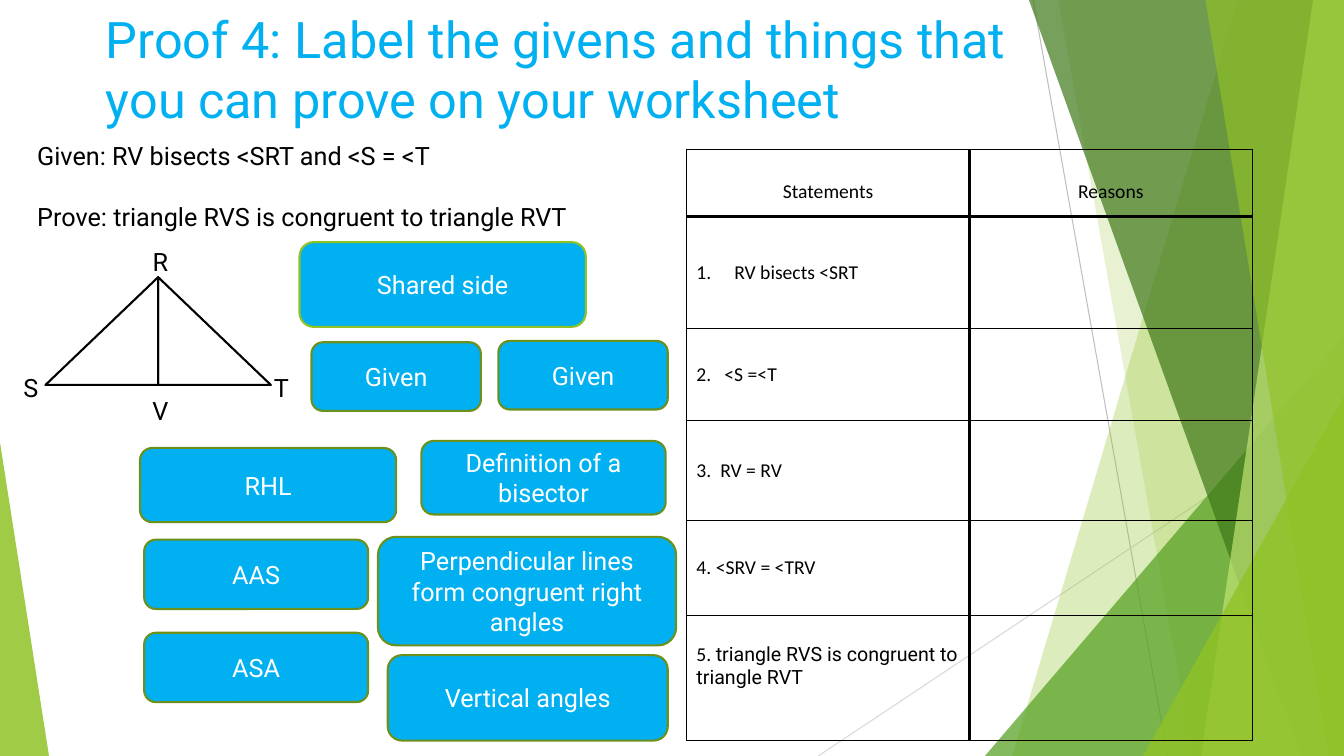
"""Build a geometry proof worksheet slide with answer cards and a two-column proof table."""
from lxml import etree
from pptx import Presentation
from pptx.dml.color import RGBColor
from pptx.enum import shapes, text
from pptx.oxml import ns
from pptx.util import Pt

WHITE = RGBColor(0xFF, 0xFF, 0xFF)
BLACK = RGBColor(0, 0, 0)
BLUE = RGBColor(0x00, 0xB0, 0xF0)
LIME = RGBColor(0x90, 0xC2, 0x26)
OLIVE = RGBColor(0x6B, 0x90, 0x1C)
GREEN = RGBColor(0x54, 0xA0, 0x21)
FOREST = RGBColor(0x3F, 0x78, 0x19)
PALE_LIME = RGBColor(0xC0, 0xE4, 0x74)
GREY = RGBColor(0xBF, 0xBF, 0xBF)
PALE_GREY = RGBColor(0xD9, 0xD9, 0xD9)

PRESET = shapes.MSO_SHAPE
ALIGN = text.PP_ALIGN
ANCHOR = text.MSO_ANCHOR

CARDS = [
    ("Shared side", (214, 173, 204.5, 60.5), LIME),
    ("Given", (356, 243.5, 121, 49), OLIVE),
    ("Definition of a bisector", (301, 315, 174.5, 52.5), OLIVE),
    ("RHL", (100, 320, 183, 53), OLIVE),
    ("AAS", (103, 385.5, 160, 49.5), OLIVE),
    ("Perpendicular lines form congruent right angles", (270, 383.5, 213, 77.5), OLIVE),
    ("ASA", (103, 452, 160, 49.5), OLIVE),
    ("Vertical angles", (277, 468, 200, 61), OLIVE),
    ("Given", (222.5, 244.5, 121, 49), OLIVE),
]

STATEMENTS = [
    ("RV bisects <SRT", 27),
    ("2.\t<S =<T", 20),
    ("3.\tRV = RV", 17),
    ("4. <SRV = <TRV", 0),
    ("5. ", 0),
]
ROW_HEIGHTS = [48, 80, 66, 71, 68, 89.5]


def style(target, values):
    """Set every attribute named in a dict."""
    for name, value in values.items():
        setattr(target, name, value)


def lengths(box):
    """Turn a box of points into lengths."""
    return [Pt(value) for value in box]


def write(para, words, size, colour, face="Roboto"):
    """Add one formatted span to a paragraph."""
    span = para.add_run()
    span.text = words
    style(span.font, {"size": Pt(size), "name": face})
    span.font.color.rgb = colour


def paint(shape, fill=None, alpha=100, line=None):
    """Give a shape its fill, transparency and outline."""
    shape.shadow.inherit = False
    if fill is None:
        shape.fill.background()
    else:
        shape.fill.solid()
        shape.fill.fore_color.rgb = fill
        if alpha < 100:
            colour = shape.fill._xPr.find(".//" + ns.qn("a:srgbClr"))
            etree.SubElement(colour, ns.qn("a:alpha"), val=str(alpha * 1000))
    if line is None:
        shape.line.fill.background()
    else:
        shape.line.color.rgb = line
        shape.line.width = Pt(1.5)


def draw_ray(page, ends, colour):
    """Draw one thin background line."""
    ray = page.shapes.add_connector(shapes.MSO_CONNECTOR.STRAIGHT, *lengths(ends))
    ray.line.color.rgb = colour
    ray.line.width = Pt(0.75)
    etree.SubElement(ray._element.spPr, ns.qn("a:effectLst"))


def draw_facet(page, box, upper, lower, colour, alpha):
    """Fill the box to the right of a slanted edge."""
    left, top, width, height = box
    right, bottom = left + width, top + height
    outline = page.shapes.build_freeform(Pt(left + upper), Pt(top))
    corners = [(right, top), (right, bottom), (left + lower, bottom)]
    outline.add_line_segments([(Pt(x), Pt(y)) for x, y in corners], close=True)
    paint(outline.convert_to_shape(), colour, alpha)


def draw_peak(page, box, apex, colour, alpha):
    """Draw a triangle with its apex at the given fraction of the width."""
    peak = page.shapes.add_shape(PRESET.ISOSCELES_TRIANGLE, *lengths(box))
    peak.adjustments[0] = apex
    paint(peak, colour, alpha)


def draw_backdrop(page, box):
    """Draw the layered green facets."""
    draw_ray(page, (738, 0, 834, 540), GREY)
    draw_ray(page, (960, 290, 584.5, 540), PALE_GREY)
    draw_facet(page, box, 184, 23, LIME, 30)
    draw_facet(page, box, 56, 152, LIME, 20)
    draw_peak(page, (703.5, 240, 256.5, 300), 1, GREEN, 72)
    draw_facet(page, box, 35, 229.5, FOREST, 70)
    draw_facet(page, box, 238, 158, PALE_LIME, 70)
    draw_facet(page, box, 161, 249, LIME, 65)
    draw_peak(page, (816.5, 283, 143.5, 257), 1, LIME, 80)
    draw_peak(page, (0, 316, 35, 224), 0, LIME, 85)


def draw_text(page, box, lines, size, colour, gap=0, align=ALIGN.LEFT):
    """Place a wrapped text box with one paragraph per line."""
    frame = page.shapes.add_textbox(*lengths(box)).text_frame
    style(frame, {"word_wrap": True, "vertical_anchor": ANCHOR.TOP})
    for index, words in enumerate(lines):
        para = frame.add_paragraph() if index else frame.paragraphs[0]
        style(para, {"alignment": align, "space_before": Pt(gap if index else 0)})
        write(para, words, size, colour)


def draw_card(page, box, words, outline):
    """Draw one rounded answer card."""
    card = page.shapes.add_shape(PRESET.ROUNDED_RECTANGLE, *lengths(box))
    paint(card, BLUE, line=outline)
    style(card.text_frame, {"word_wrap": True, "vertical_anchor": ANCHOR.MIDDLE})
    para = card.text_frame.paragraphs[0]
    para.alignment = ALIGN.CENTER
    write(para, words, 18, WHITE)


def draw_triangle(page, box):
    """Draw triangle RST with its bisector RV and vertex letters."""
    left, top, width, height = box
    half = width / 2
    for start, mirrored in ((left + half, False), (left, True)):
        side = page.shapes.add_shape(
            PRESET.RIGHT_TRIANGLE, *lengths((start, top, half, height)))
        paint(side, line=BLACK)
        if mirrored:
            side._element.spPr.xfrm.set("flipH", "1")
    vertices = {
        "R": (half - 17, -29), "S": (-29, height - 16),
        "T": (width - 11, height - 16), "V": (half - 17, height),
    }
    for letter, (x, y) in vertices.items():
        spot = (left + x, top + y + 3.5, 37, 29)
        draw_text(page, spot, [letter], 18, BLACK, align=ALIGN.CENTER)


def draw_borders(cell, widths):
    """Add black borders to a cell, in the order left, right, top, bottom."""
    props = cell._tc.get_or_add_tcPr()
    for index, (side, width) in enumerate(zip("LRTB", widths)):
        edge = etree.Element(ns.qn("a:ln" + side), w=str(Pt(width)))
        fill = etree.SubElement(edge, ns.qn("a:solidFill"))
        etree.SubElement(fill, ns.qn("a:srgbClr"), val=str(BLACK))
        props.insert(index, edge)


def draw_proof(page, box):
    """Draw the statements and reasons table."""
    rows = len(ROW_HEIGHTS)
    table = page.shapes.add_table(rows, 2, *lengths(box)).table
    style(table, {"first_row": False, "horz_banding": False})
    for column in table.columns:
        column.width = Pt(box[2] / 2)
    for row, height in enumerate(ROW_HEIGHTS):
        table.rows[row].height = Pt(height)
        for column in range(2):
            cell = table.cell(row, column)
            cell.fill.background()
            style(cell, {
                "margin_left": Pt(7), "margin_right": Pt(7),
                "margin_top": Pt(9), "margin_bottom": Pt(9),
                "vertical_anchor": ANCHOR.MIDDLE if row else ANCHOR.BOTTOM,
            })
            draw_borders(cell, (2.25 if column else 0.75, 0.75 if column else 2.25,
                                2.25 if row == 1 else 0.75, 0.75 if row else 2.25))
    for column, words in enumerate(("Statements", "Reasons")):
        para = table.cell(0, column).text_frame.paragraphs[0]
        para.alignment = ALIGN.CENTER
        write(para, words, 14, BLACK, "Calibri")
    for row, (words, indent) in enumerate(STATEMENTS, 1):
        para = table.cell(row, 0).text_frame.paragraphs[0]
        props = para._p.get_or_add_pPr()
        style(props, {})
        props.set("marL", str(Pt(indent)))
        props.set("indent", str(Pt(-indent)))
        if row == 1:
            etree.SubElement(props, ns.qn("a:buAutoNum"), type="arabicPeriod")
        write(para, words, 14, BLACK, "Calibri")
    write(para, "triangle RVS is congruent to triangle RVT", 14, BLACK)
    table.cell(rows - 1, 0).margin_bottom = Pt(26)


def main():
    """Assemble and save the slide."""
    deck = Presentation()
    style(deck, {"slide_width": Pt(960), "slide_height": Pt(540)})
    page = deck.slides.add_slide(deck.slide_layouts[6])
    draw_backdrop(page, (700, 0, 260, 540))
    draw_text(page, (68.5, 2, 677, 104),
              ["Proof 4: Label the givens and things that you can prove on your worksheet"],
              36, BLUE)
    draw_proof(page, (490.5, 106.5, 404, 422.5))
    draw_text(page, (19.5, 96.5, 440.5, 94),
              ["Given: RV bisects <SRT and <S = <T",
               "Prove: triangle RVS is congruent to triangle RVT"], 18, BLACK, gap=22)
    draw_triangle(page, (32.5, 198, 161, 77))
    for words, box, outline in CARDS:
        draw_card(page, box, words, outline)
    deck.save("out.pptx")


if __name__ == "__main__":
    main()
